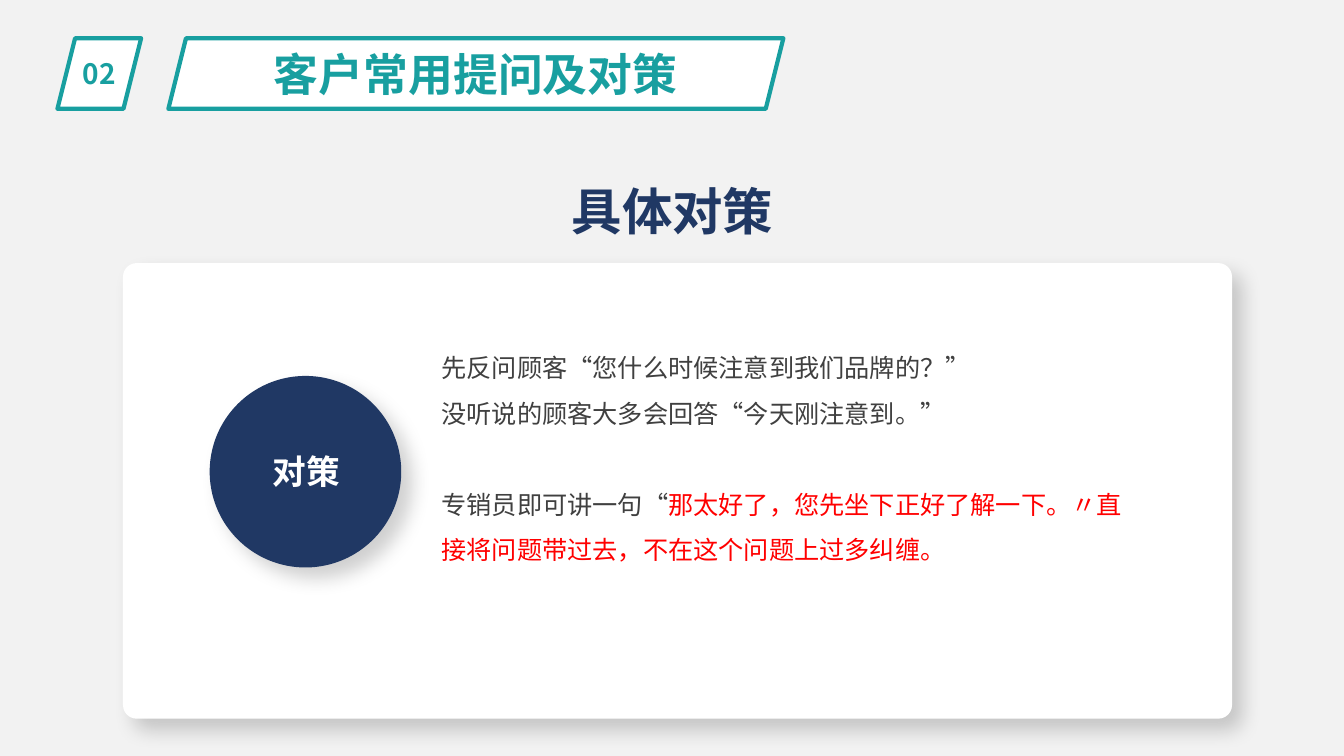
import pptx
import pptx.dml.color
import pptx.enum.shapes
import pptx.enum.text
import pptx.oxml
import pptx.oxml.ns
import pptx.util
from pptx.util import Inches

RGBColor = pptx.dml.color.RGBColor
MSO_SHAPE = pptx.enum.shapes.MSO_SHAPE
MSO_ANCHOR = pptx.enum.text.MSO_ANCHOR
PP_ALIGN = pptx.enum.text.PP_ALIGN

BACKGROUND = RGBColor(0xF2, 0xF2, 0xF2)
WHITE = RGBColor(0xFF, 0xFF, 0xFF)
TEAL = RGBColor(0x18, 0x9F, 0xA0)
NAVY = RGBColor(0x20, 0x38, 0x64)
GREY = RGBColor(0x40, 0x40, 0x40)
RED = RGBColor(0xFF, 0x00, 0x00)
FONT = "Noto Sans CJK SC"

SHADOW = (
    '<a:effectLst %s><a:outerShdw blurRad="177800" dist="139700" dir="2700000" '
    'algn="tl" rotWithShape="0"><a:srgbClr val="000000"><a:alpha val="18000"/>'
    '</a:srgbClr></a:outerShdw></a:effectLst>' % pptx.oxml.ns.nsdecls("a")
)


def apply_format(obj, values):
    for name, value in values.items():
        setattr(obj, name, value)


def add_run(p, text, size, color, bold=False):
    r = p.add_run()
    r.text = text
    apply_format(r.font, {"name": FONT, "size": pptx.util.Pt(size), "bold": bold})
    r.font.color.rgb = color
    ea = pptx.oxml.parse_xml(
        '<a:ea %s typeface="%s"/>' % (pptx.oxml.ns.nsdecls("a"), FONT))
    r.font._element.find(pptx.oxml.ns.qn("a:latin")).addnext(ea)


def add_panel(s, kind, box, fill, shadow=False):
    sp = s.shapes.add_shape(kind, *map(Inches, box))
    sp.shadow.inherit = False
    sp.fill.solid()
    sp.fill.fore_color.rgb = fill
    sp.line.fill.background()
    if shadow:
        effects = sp._element.spPr.find(pptx.oxml.ns.qn("a:effectLst"))
        effects.getparent().replace(effects, pptx.oxml.parse_xml(SHADOW))
    return sp


def add_header_tab(s, left, width, text, size):
    sp = add_panel(s, MSO_SHAPE.PARALLELOGRAM, (left, 0.38, width, 0.7), WHITE)
    sp.line.color.rgb = TEAL
    sp.line.width = pptx.util.Pt(3)
    tf = sp.text_frame
    apply_format(tf, {"margin_left": 0, "margin_right": 0, "margin_top": 0,
                      "margin_bottom": 0, "vertical_anchor": MSO_ANCHOR.MIDDLE})
    p = tf.paragraphs[0]
    p.alignment = PP_ALIGN.CENTER
    add_run(p, text, size, TEAL, True)


def add_text_box(s, box, paragraphs, size, bold=False, frame=None, para=None):
    tf = s.shapes.add_textbox(*map(Inches, box)).text_frame
    apply_format(tf, {"word_wrap": True, **(frame or {})})
    for i, (space_before, runs) in enumerate(paragraphs):
        p = tf.paragraphs[0] if i == 0 else tf.add_paragraph()
        apply_format(p, {"space_before": pptx.util.Pt(space_before), **(para or {})})
        for text, color in runs:
            add_run(p, text, size, color, bold)


def main():
    prs = pptx.Presentation()
    apply_format(prs, {"slide_width": Inches(13.33), "slide_height": Inches(7.5)})
    s = prs.slides.add_slide(prs.slide_layouts[6])
    s.background.fill.solid()
    s.background.fill.fore_color.rgb = BACKGROUND

    add_header_tab(s, 0.57, 0.83, "02", 20)
    add_header_tab(s, 1.67, 6.1, "客户常用提问及对策", 32)

    card = add_panel(s, MSO_SHAPE.ROUNDED_RECTANGLE, (1.22, 2.61, 11, 4.52), WHITE, True)
    card.adjustments[0] = 0.03

    grow = {"auto_size": pptx.enum.text.MSO_AUTO_SIZE.SHAPE_TO_FIT_TEXT}
    answer = [
        (0, [("先反问顾客“您什么时候注意到我们品牌的？”", GREY)]),
        (0, [("没听说的顾客大多会回答“今天刚注意到。”", GREY)]),
        (32.5, [("专销员即可讲一句“", GREY),
                ("那太好了，您先坐下正好了解一下。〃直接将问题带过去，不在这个问题上过多纠缠。", RED)]),
    ]
    add_text_box(s, (4.28, 3.3, 6.98, 2.37), answer, 18,
                 frame=grow, para={"line_spacing": 1.5})

    add_panel(s, MSO_SHAPE.OVAL, (2.08, 3.73, 1.9, 1.9), NAVY, True)
    add_text_box(s, (2.54, 4.3, 0.99, 0.57), [(0, [("对策", WHITE)])], 24, True,
                 grow, {"alignment": PP_ALIGN.CENTER, "line_spacing": 1.3})
    add_text_box(s, (0.73, 1.75, 11.88, 0.68), [(0, [("具体对策", NAVY)])], 36, True,
                 {"vertical_anchor": MSO_ANCHOR.MIDDLE},
                 {"alignment": PP_ALIGN.CENTER})

    prs.save("out.pptx")


if __name__ == "__main__":
    main()
